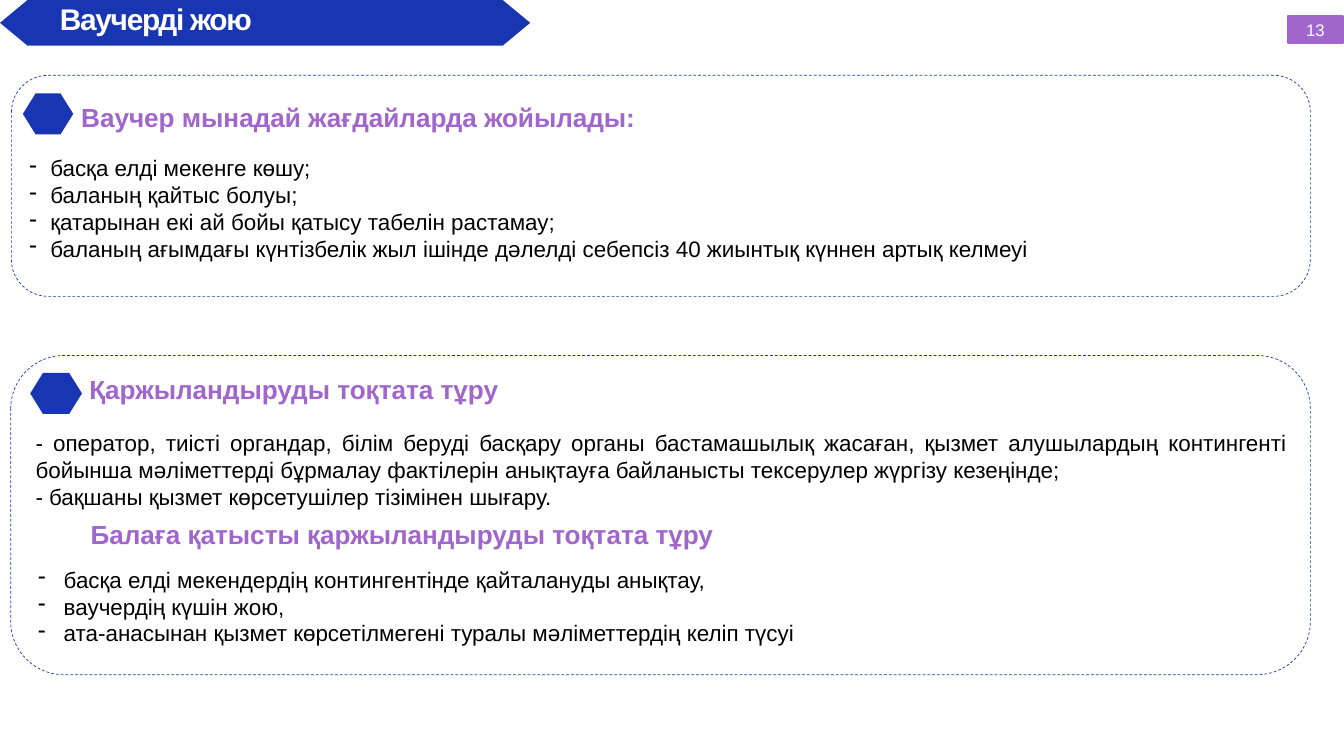
"""Build the slide on cancelling a voucher and suspending its funding."""
from dataclasses import dataclass

from lxml import etree
from pptx import Presentation
from pptx.dml.color import RGBColor
from pptx.enum.dml import MSO_LINE
from pptx.enum.shapes import MSO_SHAPE
from pptx.enum.text import MSO_ANCHOR, MSO_AUTO_SIZE, PP_ALIGN
from pptx.oxml.ns import qn
from pptx.util import Inches, Pt

DASH = MSO_LINE.DASH
ROUND, RECT = MSO_SHAPE.ROUNDED_RECTANGLE, MSO_SHAPE.RECTANGLE
MIDDLE = MSO_ANCHOR.MIDDLE
GROW = MSO_AUTO_SIZE.SHAPE_TO_FIT_TEXT
LEFT, CENTER, JUSTIFY = PP_ALIGN.LEFT, PP_ALIGN.CENTER, PP_ALIGN.JUSTIFY


@dataclass(frozen=True)
class Theme:
    font: str = "Arial"
    blue: RGBColor = RGBColor(0x18, 0x36, 0xB2)
    violet: RGBColor = RGBColor(0xA0, 0x66, 0xCB)
    white: RGBColor = RGBColor(0xFF, 0xFF, 0xFF)
    black: RGBColor = RGBColor(0, 0, 0)
    title: int = 32
    head: int = 28
    body: int = 24
    page: int = 18


theme = Theme()
deck = Presentation()
deck.slide_width, deck.slide_height = Inches(20), Inches(11.25)
slide = deck.slides.add_slide(deck.slide_layouts[6])
shapes = slide.shapes


def write(shape, lines, size, color, bold=False, align=LEFT, indent=0):
    frame = shape.text_frame
    frame.text = "\n".join(lines)
    for para in frame.paragraphs:
        para.alignment = align
        font = para.runs[0].font
        font.name, font.size, font.bold = theme.font, Pt(size), bold
        font.color.rgb = color
        if indent:
            props = para._p.get_or_add_pPr()
            props.set("marL", str(Inches(indent)))
            props.set("indent", str(-Inches(indent)))
            etree.SubElement(props, qn("a:buChar")).set("char", "-")


def add_hex(left, top, width, height, inset):
    right, low, mid = left + width, top + height, top + height / 2
    points = [(left + inset, top), (right - inset, top), (right, mid),
              (right - inset, low), (left + inset, low), (left, mid)]
    points = [(Inches(x), Inches(y)) for x, y in points]
    build = shapes.build_freeform(*points[0])
    build.add_line_segments(points[1:], close=True)
    shape = build.convert_to_shape()
    shape.shadow.inherit = False
    shape.fill.solid()
    shape.fill.fore_color.rgb = theme.blue
    shape.line.fill.background()


add_hex(0, 0, 7.89, 0.68, 0.41)
title = shapes.add_textbox(Inches(0.89), Inches(0.01), Inches(7.17), Inches(0.54))
frame = title.text_frame
frame.word_wrap = True
frame.margin_left = frame.margin_right = frame.margin_top = frame.margin_bottom = 0
write(title, ["Ваучерді жою"], theme.title, theme.white, bold=True)
frame.paragraphs[0].runs[0].font._element.set("spc", "-140")

for spot in [(0.17, 1.12, 19.33, 3.29), (0.16, 5.29, 19.34, 4.75)]:
    panel = shapes.add_shape(ROUND, *map(Inches, spot))
    panel.shadow.inherit = False
    panel.fill.background()
    panel.line.color.rgb = theme.blue
    panel.line.width = Pt(0.75)
    panel.line.dash_style = DASH

add_hex(0.34, 1.39, 0.75, 0.61, 0.19)
add_hex(0.45, 5.55, 0.77, 0.61, 0.19)

heads = [
    ((1.11, 1.46, 8.67, 0.57), "Ваучер мынадай жағдайларда жойылады:"),
    ((1.23, 5.5, 6.31, 0.57), "Қаржыландыруды тоқтата тұру"),
    ((1.25, 7.67, 9.57, 0.57), "Балаға қатысты қаржыландыруды тоқтата тұру"),
]
for spot, text in heads:
    box = shapes.add_textbox(*map(Inches, spot))
    box.text_frame.word_wrap = False
    box.text_frame.auto_size = GROW
    write(box, [text], theme.head, theme.violet, bold=True)

bodies = [
    ((0.34, 2.25, 19.16, 1.72), LEFT, 0.31, [
        "басқа елді мекенге көшу;",
        "баланың қайтыс болуы;",
        "қатарынан екі ай бойы қатысу табелін растамау;",
        "баланың ағымдағы күнтізбелік жыл ішінде дәлелді себепсіз "
        "40 жиынтық күннен артық келмеуі",
    ]),
    ((0.43, 6.34, 18.81, 1.31), JUSTIFY, 0, [
        "- оператор, тиісті органдар, білім беруді басқару органы бастамашылық "
        "жасаған, қызмет алушылардың контингенті бойынша мәліметтерді бұрмалау "
        "фактілерін анықтауға байланысты тексерулер жүргізу кезеңінде;",
        "- бақшаны қызмет көрсетушілер тізімінен шығару.",
    ]),
    ((0.47, 8.37, 18.57, 1.31), LEFT, 0.38, [
        "басқа елді мекендердің контингентінде қайталануды анықтау,",
        "ваучердің күшін жою,",
        "ата-анасынан қызмет көрсетілмегені туралы мәліметтердің келіп түсуі",
    ]),
]
for spot, align, indent, lines in bodies:
    box = shapes.add_textbox(*map(Inches, spot))
    box.text_frame.word_wrap = True
    box.text_frame.auto_size = GROW
    write(box, lines, theme.body, theme.black, align=align, indent=indent)

badge = shapes.add_shape(RECT, Inches(19.17), Inches(0.24), Inches(0.81), Inches(0.4))
badge.shadow.inherit = False
badge.fill.solid()
badge.fill.fore_color.rgb = badge.line.color.rgb = theme.violet
badge.line.width = Pt(2)
badge.text_frame.vertical_anchor = MIDDLE
write(badge, ["13"], theme.page, theme.white, align=CENTER)

deck.save("out.pptx")
